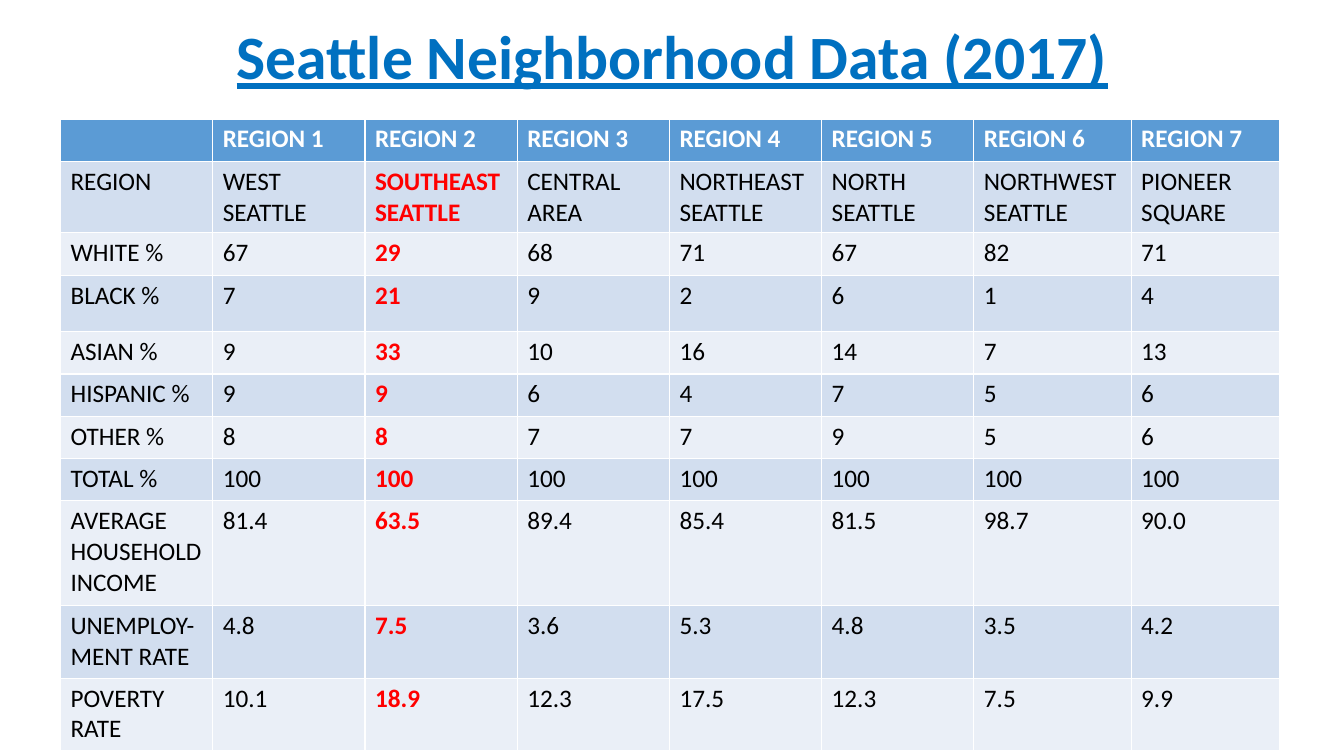
from pptx import Presentation, util as u
from pptx.dml import color
from pptx.enum import text

THEME = dict(font="Calibri", title_size=44, cell_size=18, title="0070C0",
             header="5B9BD5", bands=("EAEFF7", "D2DEEF"),
             white="FFFFFF", body="000000", accent="FF0000")

ROWS = [  # height in inches, then the cells
    (0.42, ["", *(f"REGION {n}" for n in range(1, 8))]),
    (0.67, ["REGION", "WEST SEATTLE", "SOUTHEAST SEATTLE", "CENTRAL AREA",
            "NORTHEAST SEATTLE", "NORTH SEATTLE", "NORTHWEST SEATTLE",
            "PIONEER SQUARE"]),
    (0.42, ["WHITE %", 67, 29, 68, 71, 67, 82, 71]),
    (0.56, ["BLACK %", 7, 21, 9, 2, 6, 1, 4]),
    (0.42, ["ASIAN %", 9, 33, 10, 16, 14, 7, 13]),
    (0.42, ["HISPANIC %", 9, 9, 6, 4, 7, 5, 6]),
    (0.42, ["OTHER %", 8, 8, 7, 7, 9, 5, 6]),
    (0.42, ["TOTAL %"] + [100] * 7),
    (1.04, ["AVERAGE HOUSEHOLD INCOME", 81.4, 63.5, 89.4, 85.4, 81.5, 98.7, "90.0"]),
    (0.72, ["UNEMPLOY-MENT RATE", 4.8, 7.5, 3.6, 5.3, 4.8, 3.5, 4.2]),
    (0.72, ["POVERTY RATE", 10.1, 18.9, 12.3, 17.5, 12.3, 7.5, 9.9]),
]
COL_WIDTHS = [1.51] * 6 + [1.56, 1.47]
FOCUS_COL = 2  # Southeast Seattle


def write(tf, content, *, size, rgb, bold=False, underline=None, align=None, spacing=None):
    p = tf.paragraphs[0]
    p.alignment, p.line_spacing = align, spacing
    r = p.add_run()
    r.text = str(content)
    f = r.font
    f.name, f.size, f.bold, f.underline = THEME["font"], u.Pt(size), bold, underline
    f.color.rgb = color.RGBColor.from_string(rgb)


prs = Presentation()
prs.slide_width, prs.slide_height = u.Inches(13.33), u.Inches(7.5)
s = prs.slides.add_slide(prs.slide_layouts[5])

# Title
sp = s.shapes.title
sp.left, sp.top, sp.width, sp.height = map(u.Inches, (0.92, 0.16, 11.5, 0.87))
tf = sp.text_frame
tf.auto_size = text.MSO_AUTO_SIZE.NONE
tf.vertical_anchor = text.MSO_ANCHOR.MIDDLE
write(tf, "Seattle Neighborhood Data (2017)", size=THEME["title_size"],
      rgb=THEME["title"], bold=True, underline=True,
      align=text.PP_ALIGN.CENTER, spacing=0.9)

# Table grid
heights = [height for height, _ in ROWS]
tbl = s.shapes.add_table(len(ROWS), len(COL_WIDTHS), u.Inches(0.6), u.Inches(1.18),
                         u.Inches(sum(COL_WIDTHS)), u.Inches(sum(heights))).table
for col, width in zip(tbl.columns, COL_WIDTHS):
    col.width = u.Inches(width)
for row, height in zip(tbl.rows, heights):
    row.height = u.Inches(height)

# Cells: header, alternating bands, one highlighted column
for i, (_, values) in enumerate(ROWS):
    for j, value in enumerate(values):
        cell = tbl.cell(i, j)
        cell.fill.solid()
        fill = THEME["bands"][i % 2] if i else THEME["header"]
        cell.fill.fore_color.rgb = color.RGBColor.from_string(fill)
        if value == "":
            continue
        focus = j == FOCUS_COL
        rgb = THEME["white"] if i == 0 else THEME["accent" if focus else "body"]
        write(cell.text_frame, value, size=THEME["cell_size"], rgb=rgb,
              bold=i == 0 or focus)

prs.save("out.pptx")
